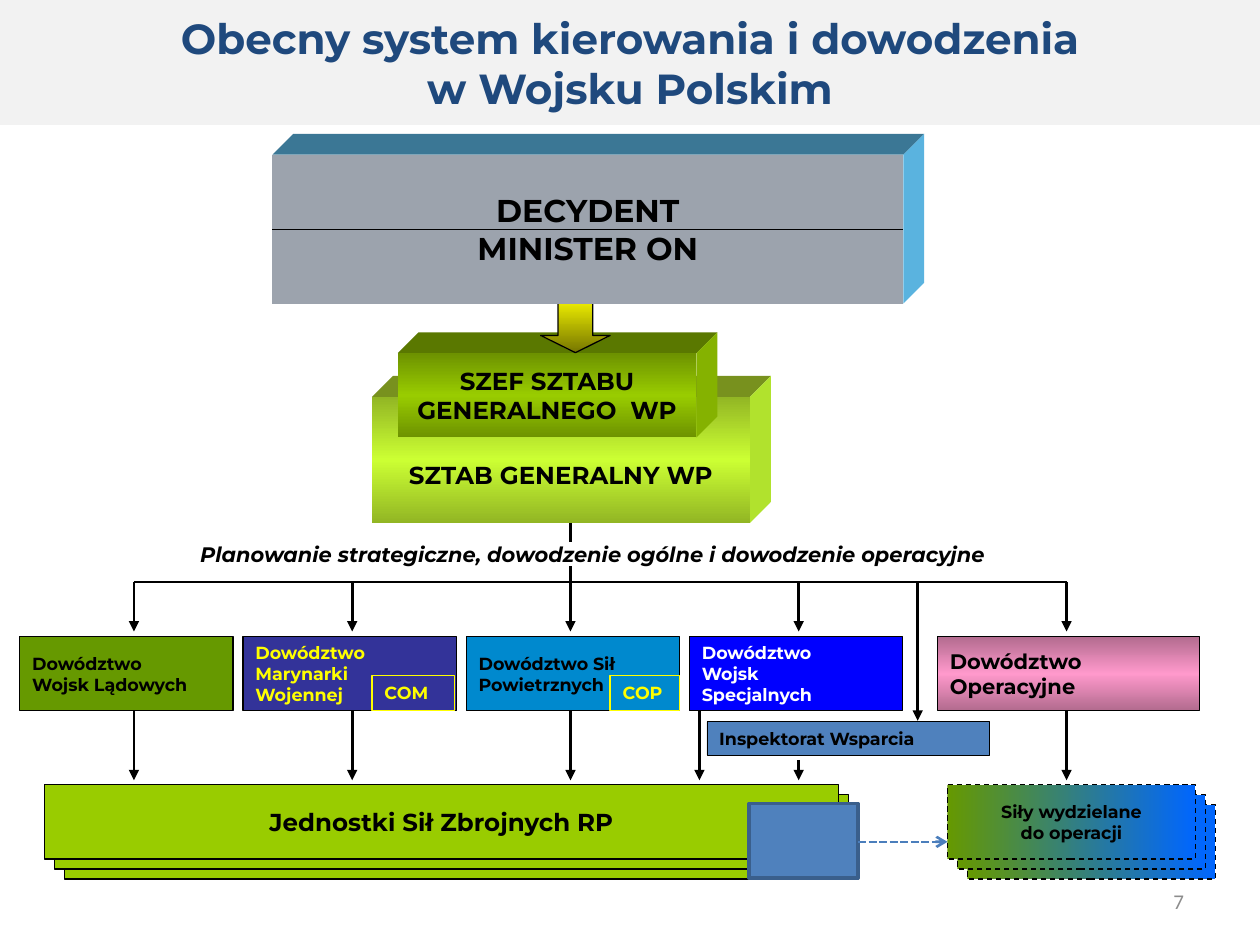
from pptx import Presentation
from pptx.dml.color import RGBColor
from pptx.enum.dml import MSO_LINE
from pptx.enum.shapes import MSO_CONNECTOR, MSO_SHAPE
from pptx.enum.text import MSO_ANCHOR, PP_ALIGN
from pptx.oxml import parse_xml
from pptx.oxml.ns import nsdecls, qn
from pptx.util import Cm, Pt

RECT = MSO_SHAPE.RECTANGLE
FLOW = MSO_SHAPE.FLOWCHART_PROCESS
DEPTH = 0.42


def color(code):
    return RGBColor.from_string(code)


def paint(shape, fill, angle=90):
    if fill is None:
        shape.fill.background()
    elif isinstance(fill, str):
        shape.fill.solid()
        shape.fill.fore_color.rgb = color(fill)
    else:
        shape.fill.gradient()
        shape.fill.gradient_angle = (360 - angle) % 360
        stops = shape._element.spPr.find(".//" + qn("a:gsLst"))
        for stop in list(stops):
            stops.remove(stop)
        for i, code in enumerate(fill):
            pos = 100000 * i // (len(fill) - 1)
            stops.append(parse_xml(
                f'<a:gs {nsdecls("a")} pos="{pos}"><a:srgbClr val="{code}"/></a:gs>'))


def border(shape, line, width=0.75, dash=None):
    if line is None:
        shape.line.fill.background()
        return
    shape.line.color.rgb = color(line)
    shape.line.width = Pt(width)
    if dash:
        shape.line.dash_style = dash


def write(shape, text, size=10, ink="000000", align=PP_ALIGN.LEFT,
          anchor=MSO_ANCHOR.MIDDLE, bold=True, italic=False, face="Montserrat"):
    frame = shape.text_frame
    frame.word_wrap = True
    frame.vertical_anchor = anchor
    frame.text = text
    for para in frame.paragraphs:
        para.alignment = align
        font = para.font
        font.name, font.size = face, Pt(size)
        font.bold, font.italic = bold, italic
        font.color.rgb = color(ink)


def box(slide, x, y, w, h, fill, line="000000", kind=RECT, angle=90, width=0.75, dash=None):
    shape = slide.shapes.add_shape(kind, Cm(x), Cm(y), Cm(w), Cm(h))
    shape.shadow.inherit = False
    paint(shape, fill, angle)
    border(shape, line, width, dash)
    return shape


def face(slide, points, fill):
    start, *rest = [(Cm(x), Cm(y)) for x, y in points]
    form = slide.shapes.build_freeform(*start)
    form.add_line_segments(rest)
    shape = form.convert_to_shape()
    shape.shadow.inherit = False
    paint(shape, fill)
    border(shape, None)


def block(slide, x, y, w, h, fill, top, side):
    r, b = x + w, y + h
    face(slide, [(x, y), (x + DEPTH, y - DEPTH), (r + DEPTH, y - DEPTH), (r, y)], top)
    face(slide, [(r, y), (r + DEPTH, y - DEPTH), (r + DEPTH, b - DEPTH), (r, b)], side)
    return box(slide, x, y, w, h, fill, None, FLOW)


def stack(slide, x, w, fill, dash=None):
    for i in (2, 1, 0):
        sheet = box(slide, x + 0.2 * i, 15.82 + 0.2 * i, w, 1.5, fill, angle=0, dash=dash)
    return sheet


def link(slide, x1, y1, x2, y2, tip="triangle", ink="000000", width=1.5, dash=None):
    line = slide.shapes.add_connector(
        MSO_CONNECTOR.STRAIGHT, Cm(x1), Cm(y1), Cm(x2), Cm(y2))
    border(line, ink, width, dash)
    if tip:
        line.line._get_or_add_ln().append(
            parse_xml(f'<a:tailEnd {nsdecls("a")} type="{tip}"/>'))
    line._element.spPr.append(parse_xml(f'<a:effectLst {nsdecls("a")}/>'))


def leaders(slide):
    mid = PP_ALIGN.CENTER
    staff = block(slide, 7.5, 8, 7.62, 2.54, ["92B624", "CCFF33", "92B624"],
                  "78911E", "B1E22D")
    write(staff, "SZTAB GENERALNY WP", 14, align=mid)
    staff.text_frame.margin_top = Cm(0.73)
    chief = block(slide, 8.02, 7.12, 6.02, 1.7, ["6D9200", "99CC00", "6D9200"],
                  "5A7800", "85B200")
    write(chief, "SZEF SZTABU GENERALNEGO  WP", 14, align=mid)
    arrow = box(slide, 10.9, 5.92, 1.4, 1.19, ["FFFF00", "767600"], kind=MSO_SHAPE.DOWN_ARROW)
    arrow.adjustments[1] = 0.29
    boss = block(slide, 5.49, 3.12, 12.72, 3, "9CA3AD", "3B7795", "5AB3DF")
    write(boss, "DECYDENT\nMINISTER ON", 18, align=mid)
    link(slide, 5.49, 4.62, 18.21, 4.62, None, width=0.75)


def commands(slide):
    units = [
        ("Dowództwo\nWojsk Lądowych", "669900", "000000"),
        ("Dowództwo\nMarynarki\nWojennej", "333399", "FFFF00"),
        ("Dowództwo Sił\nPowietrznych", "0089CE", "000000"),
        ("Dowództwo\nWojsk\nSpecjalnych", "0000FF", "FFFFFF"),
    ]
    for i, (text, fill, ink) in enumerate(units):
        write(box(slide, 0.4 + 4.5 * i, 12.83, 4.3, 1.5, fill), text, ink=ink)
    for text, x, w in (("COM", 7.5, 1.67), ("COP", 12.3, 1.4)):
        write(box(slide, x, 13.62, w, 0.7, None, "FFFF00"), text,
              ink="FFFF00", anchor=MSO_ANCHOR.TOP)
    field = box(slide, 18.9, 12.83, 5.28, 1.5, ["B26B8E", "FF99CC", "B26B8E"], kind=FLOW)
    write(field, "Dowództwo Operacyjne", 12)
    aid = box(slide, 14.25, 14.55, 5.69, 0.67, "4F81BD", width=0.25)
    write(aid, "Inspektorat Wsparcia", anchor=MSO_ANCHOR.TOP)


def forces(slide):
    mid = PP_ALIGN.CENTER
    write(stack(slide, 0.9, 16, "99CC00"), "Jednostki Sił Zbrojnych RP", 14, align=mid)
    away = stack(slide, 19.1, 5, ["669900", "0066FF"], MSO_LINE.DASH)
    write(away, "Siły wydzielane\vdo operacji", align=mid)


def links(slide):
    bar = 11.73
    link(slide, 2.7, bar, 21.5, bar, None)
    link(slide, 11.5, 10.54, 11.5, bar, None)
    for x in (2.7, 7.1, 11.5, 16.1, 21.5):
        link(slide, x, bar, x, 12.73)
    for x in (2.7, 7.1, 11.5, 14.1, 21.5):
        link(slide, x, 14.33, x, 15.73)
    link(slide, 18.5, bar, 18.5, 14.53)
    link(slide, 16.1, 15.32, 16.1, 15.73)
    box(slide, 15.1, 16.2, 2.2, 1.5, "4F81BD", "3A5F8C", width=2)
    link(slide, 17.3, 16.97, 19.1, 16.97, "arrow", "4B7EBC", dash=MSO_LINE.SQUARE_DOT)


def labels(slide):
    mid = PP_ALIGN.CENTER
    title = box(slide, 0, 0, 25.4, 2.52, "F2F2F2", None)
    write(title, "Obecny system kierowania i dowodzenia\nw Wojsku Polskim", 24, "1F497D", mid)
    plan = box(slide, 2.7, 10.92, 18.5, 0.5, "FFFFFF", None, FLOW)
    write(plan, "Planowanie strategiczne, dowodzenie ogólne i dowodzenie operacyjne",
          12, align=mid, italic=True)
    page = slide.shapes.add_textbox(Cm(18.2), Cm(17.65), Cm(5.92), Cm(1.02))
    write(page, "7", 12, "8C8C8C", PP_ALIGN.RIGHT, bold=False, face="Calibri")


def main():
    deck = Presentation()
    deck.slide_width, deck.slide_height = Cm(25.4), Cm(19.05)
    slide = deck.slides.add_slide(deck.slide_layouts[6])
    for part in (leaders, commands, forces, links, labels):
        part(slide)
    deck.save("out.pptx")


if __name__ == "__main__":
    main()
